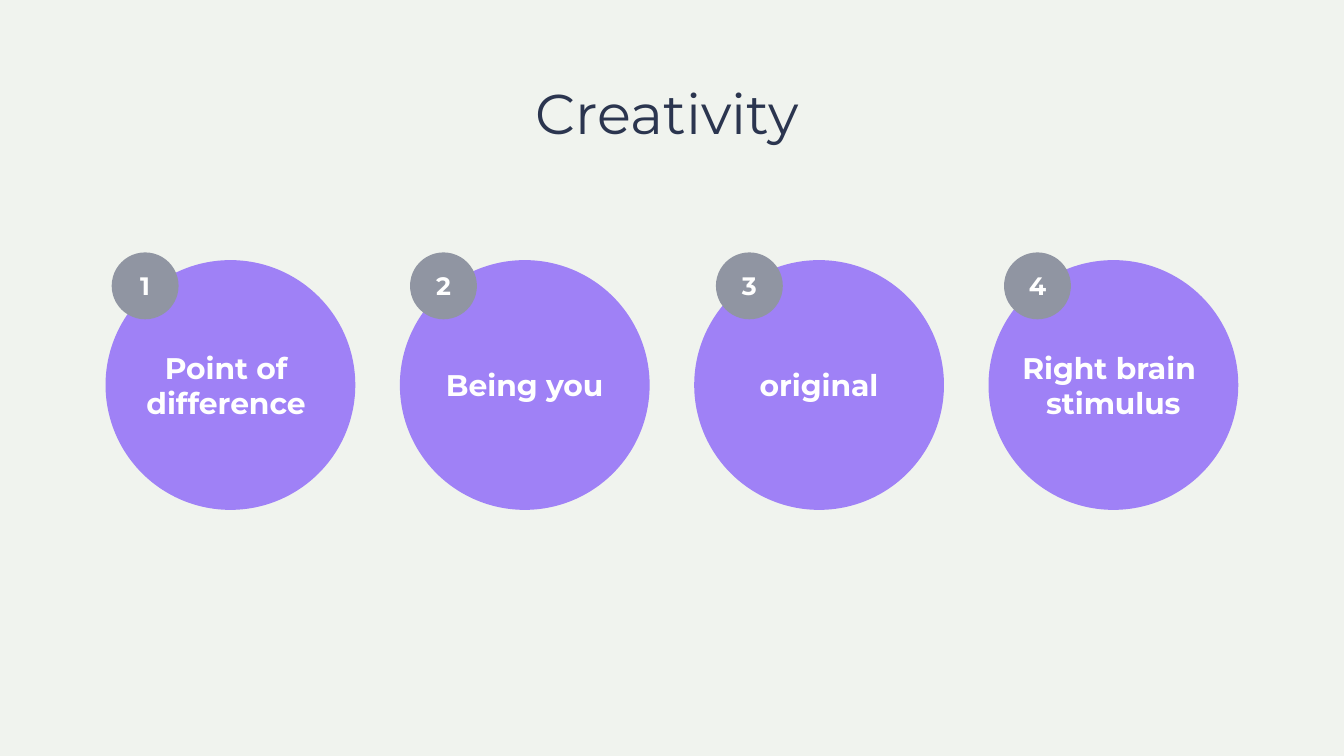
from pptx import Presentation
from pptx.dml.color import RGBColor
from pptx.enum.shapes import MSO_SHAPE as Shape
from pptx.enum.text import MSO_ANCHOR as Anchor, PP_ALIGN as Align
from pptx.util import Pt

TITLE = "Creativity"
IDEAS = [
    (["Point of ", "difference "], 79.8),
    (["Being you"], 292.9),
    (["original"], 511.4),
    (["Right brain ", "stimulus"], 717.2),
]

BACKGROUND = RGBColor(0xF0, 0xF3, 0xEE)
NAVY = RGBColor(0x2B, 0x35, 0x4F)
PURPLE = RGBColor(0x9F, 0x81, 0xF6)
GRAY = RGBColor(0x90, 0x95, 0xA2)
WHITE = RGBColor(0xFF, 0xFF, 0xFF)
FONT = "Montserrat"

SLIDE_WIDTH, SLIDE_HEIGHT = 960, 540
CIRCLE_LEFT, CIRCLE_TOP, CIRCLE_SIZE, CIRCLE_PITCH = 75.4, 185.8, 178.4, 210.24
BADGE_TOP, BADGE_SIZE = 180.3, 47.8


def write_lines(frame, lines, size, color, bold):
    frame.vertical_anchor = Anchor.MIDDLE
    for number, line in enumerate(lines):
        paragraph = frame.paragraphs[0] if number == 0 else frame.add_paragraph()
        paragraph.alignment = Align.CENTER
        run = paragraph.add_run()
        run.text = line
        run.font.name = FONT
        run.font.size = Pt(size)
        run.font.bold = bold
        run.font.color.rgb = color


def set_margins(frame, right, vertical):
    frame.margin_left = 0
    frame.margin_right = Pt(right)
    frame.margin_top = frame.margin_bottom = Pt(vertical)


def add_disc(slide, left, top, diameter, fill, lines, size, wrap):
    disc = slide.shapes.add_shape(
        Shape.OVAL, Pt(left), Pt(top), Pt(diameter), Pt(diameter))
    disc.shadow.inherit = False
    disc.fill.solid()
    disc.fill.fore_color.rgb = fill
    disc.line.fill.background()
    disc.text_frame.word_wrap = wrap
    set_margins(disc.text_frame, 0, 0)
    write_lines(disc.text_frame, lines, size, WHITE, True)


def main():
    deck = Presentation()
    deck.slide_width, deck.slide_height = Pt(SLIDE_WIDTH), Pt(SLIDE_HEIGHT)
    slide = deck.slides.add_slide(deck.slide_layouts[5])
    slide.background.fill.solid()
    slide.background.fill.fore_color.rgb = BACKGROUND

    heading = slide.shapes.title
    heading.left, heading.top = Pt(0), Pt(53.3)
    heading.width, heading.height = Pt(SLIDE_WIDTH), Pt(59.8)
    set_margins(heading.text_frame, 6.5, 2.9)
    write_lines(heading.text_frame, [TITLE], 40, NAVY, False)
    heading.text_frame.paragraphs[0].line_spacing = 0.9

    for column, (idea, _) in enumerate(IDEAS):
        add_disc(slide, CIRCLE_LEFT + column * CIRCLE_PITCH, CIRCLE_TOP,
                 CIRCLE_SIZE, PURPLE, idea, 21.3, False)
    for number, (_, badge_left) in enumerate(IDEAS, 1):
        add_disc(slide, badge_left, BADGE_TOP, BADGE_SIZE, GRAY,
                 [str(number)], 18, True)

    deck.save("out.pptx")


if __name__ == "__main__":
    main()
